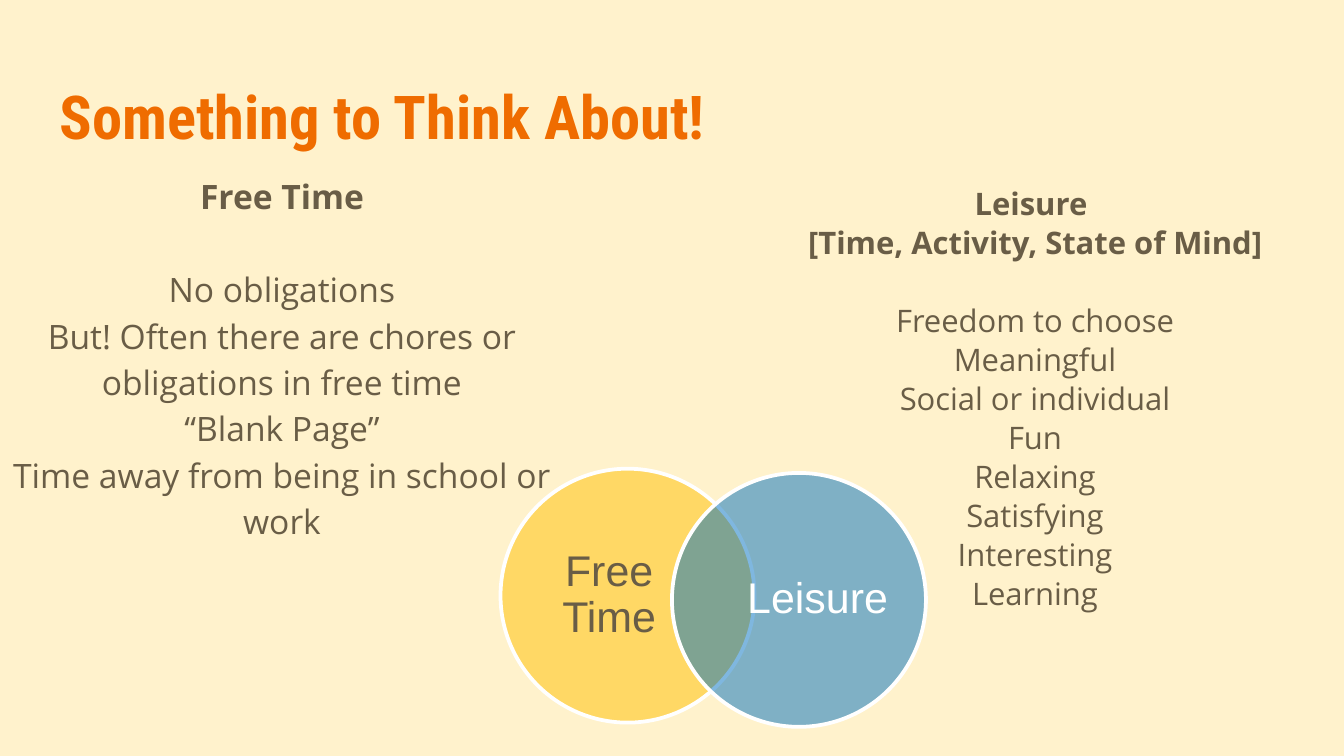
from dataclasses import dataclass

import pptx
import pptx.dml.color
import pptx.enum.shapes
import pptx.enum.text
import pptx.util
from lxml import etree
from pptx.oxml.ns import qn

Cm = pptx.util.Cm
Pt = pptx.util.Pt
RGBColor = pptx.dml.color.RGBColor
Align = pptx.enum.text.PP_ALIGN
Anchor = pptx.enum.text.MSO_ANCHOR

CREAM = RGBColor(0xFF, 0xF2, 0xCC)
ORANGE = RGBColor(0xEF, 0x6C, 0x00)
BROWN = RGBColor(0x69, 0x5D, 0x46)
YELLOW = RGBColor(0xFF, 0xC0, 0x00)
BLUE = RGBColor(0x00, 0x70, 0xC0)
WHITE = RGBColor(0xFF, 0xFF, 0xFF)

COLUMN_WIDTH, COLUMN_HEIGHT = 11.1, 9.17
CIRCLE_SIZE = 4.8
LABEL_WIDTH, LABEL_HEIGHT = 2.77, 3.66


@dataclass
class Column:
    left: float
    top: float
    size: float
    line_spacing: float
    gap: float  # points between heading and list
    heading: list[str]
    lines: list[str]


@dataclass
class Circle:
    text: str
    left: float
    top: float
    label_offset: float
    fill: RGBColor
    text_color: RGBColor


COLUMNS = [
    Column(-0.41, 2.97, 18, 1.15, 24.9, ["Free Time"], [
        "No obligations",
        "But! Often there are chores or obligations in free time",
        "“Blank Page”",
        "Time away from being in school or work",
    ]),
    Column(13.82, 3.2, 16.6, 1.05, 20.9,
           ["Leisure ", "[Time, Activity, State of Mind]"], [
               "Freedom to choose", "Meaningful", "Social or individual", "Fun",
               "Relaxing", "Satisfying", "Interesting", "Learning",
           ]),
]

CIRCLES = [
    Circle("Free Time", 9.46, 8.86, 0.67, YELLOW, BROWN),
    Circle("Leisure", 12.7, 8.94, 1.37, BLUE, WHITE),
]


def place(shape, left: float, top: float, width: float, height: float) -> None:
    shape.left, shape.top = Cm(left), Cm(top)
    shape.width, shape.height = Cm(width), Cm(height)


def set_frame(frame, inset: float, anchor) -> None:
    frame.word_wrap = True
    frame.auto_size = pptx.enum.text.MSO_AUTO_SIZE.NONE
    frame.vertical_anchor = anchor
    frame.margin_left = frame.margin_right = Cm(inset)
    frame.margin_top = frame.margin_bottom = Cm(inset)


def add_span(para, text: str, font: str, size: float, color: RGBColor,
             bold: bool = False) -> None:
    span = para.add_run()
    span.text = text
    span.font.name, span.font.size = font, Pt(size)
    span.font.bold = bold
    span.font.color.rgb = color


def fill_column(box, column: Column) -> None:
    place(box, column.left, column.top, COLUMN_WIDTH, COLUMN_HEIGHT)
    frame = box.text_frame
    set_frame(frame, 0.25, Anchor.TOP)
    for index, text in enumerate(column.heading + column.lines):
        para = frame.add_paragraph() if index else frame.paragraphs[0]
        para.alignment = Align.CENTER
        para.line_spacing = column.line_spacing
        para.space_before = Pt(0)
        is_last_heading = index == len(column.heading) - 1
        para.space_after = Pt(column.gap if is_last_heading else 0)
        properties = para._p.get_or_add_pPr()
        properties.set("marL", str(Cm(0.38)))
        properties.set("indent", "0")
        etree.SubElement(properties, qn("a:buNone"))
        add_span(para, text, "Open Sans", column.size, BROWN,
                 bold=index < len(column.heading))


def draw_circle(group, circle: Circle) -> None:
    shape = group.shapes.add_shape(
        pptx.enum.shapes.MSO_SHAPE.OVAL, Cm(circle.left), Cm(circle.top),
        Cm(CIRCLE_SIZE), Cm(CIRCLE_SIZE))
    shape.shadow.inherit = False
    shape.fill.solid()
    shape.fill.fore_color.rgb = circle.fill
    color = shape.fill._xPr.find(qn("a:solidFill"))[0]
    etree.SubElement(color, qn("a:alpha"), val="50000")
    shape.line.color.rgb = WHITE
    shape.line.width = Pt(2)

    label = group.shapes.add_textbox(
        Cm(circle.left + circle.label_offset),
        Cm(circle.top + (CIRCLE_SIZE - LABEL_HEIGHT) / 2),
        Cm(LABEL_WIDTH), Cm(LABEL_HEIGHT))
    set_frame(label.text_frame, 0, Anchor.MIDDLE)
    para = label.text_frame.paragraphs[0]
    para.alignment = Align.CENTER
    para.line_spacing = 0.9
    add_span(para, circle.text, "Arial", 23, circle.text_color)


def main() -> None:
    deck = pptx.Presentation()
    deck.slide_width, deck.slide_height = Cm(25.4), Cm(14.29)
    page = deck.slides.add_slide(deck.slide_layouts.get_by_name("Two Content"))
    page.background.fill.solid()
    page.background.fill.fore_color.rgb = CREAM

    # Title
    title, *bodies = page.placeholders
    place(title, 0.88, 1.2, 23.67, 1.96)
    set_frame(title.text_frame, 0.25, Anchor.MIDDLE)
    para = title.text_frame.paragraphs[0]
    para.alignment = Align.LEFT
    add_span(para, "Something to Think About!", "Roboto Condensed", 32.4,
             ORANGE, bold=True)

    # Two lists
    for box, column in zip(bodies, COLUMNS):
        fill_column(box, column)

    # Overlapping circles
    venn = page.shapes.add_group_shape()
    for circle in CIRCLES:
        draw_circle(venn, circle)

    deck.save("out.pptx")


if __name__ == "__main__":
    main()
